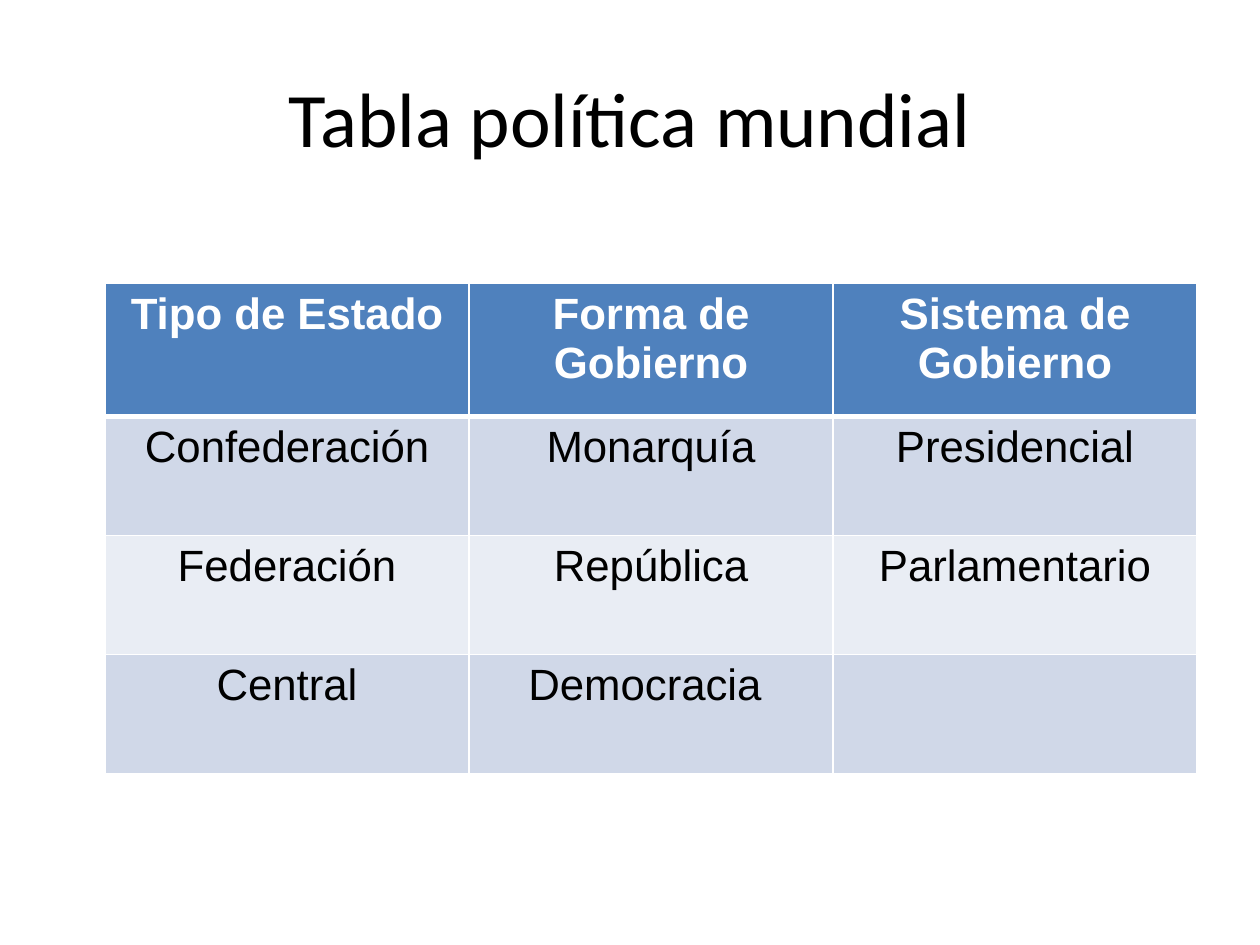
from dataclasses import dataclass

from lxml import etree
from pptx import Presentation
from pptx.dml.color import RGBColor
from pptx.enum.text import MSO_ANCHOR, PP_ALIGN
from pptx.oxml.ns import qn
from pptx.util import Pt

CENTER = PP_ALIGN.CENTER
MIDDLE = MSO_ANCHOR.MIDDLE

HUES = {
    "head": "4F81BD",
    "odd": "D0D8E8",
    "even": "E9EDF4",
    "white": "FFFFFF",
    "black": "000000",
}


@dataclass
class Style:
    font: dict
    hue: str


@dataclass
class Row:
    words: tuple
    high: float
    fill: str
    style: Style
    top: float = 1
    base: float = 1


TITLE = Style({"name": "Calibri", "size": Pt(44), "bold": False}, "black")
HEAD = Style({"name": "Arial", "size": Pt(25), "bold": True}, "white")
BODY = Style({"name": "Arial", "size": Pt(25), "bold": False}, "black")

ROWS = [
    Row(("Tipo de Estado", "Forma de Gobierno", "Sistema de Gobierno"),
        76, "head", HEAD, base=3),
    Row(("Confederación", "Monarquía", "Presidencial"), 68, "odd", BODY, top=3),
    Row(("Federación", "República", "Parlamentario"), 68, "even", BODY),
    Row(("Central", "Democracia ", ""), 68, "odd", BODY),
]


def write(frame, words: str, style: Style) -> None:
    par = frame.paragraphs[0]
    par.alignment = CENTER
    font = par.font
    if words:
        run = par.add_run()
        run.text = words
        font = run.font
    for key, value in style.font.items():
        setattr(font, key, value)
    font.color.rgb = RGBColor.from_string(HUES[style.hue])


def edge(cell, sides: dict) -> None:
    props = cell._tc.get_or_add_tcPr()
    for side, width in sides.items():
        line = etree.SubElement(props, qn(f"a:ln{side}"), w=str(Pt(width)))
        fill = etree.SubElement(line, qn("a:solidFill"))
        etree.SubElement(fill, qn("a:srgbClr"), val=HUES["white"])


def add_title(slide, words: str) -> None:
    box = slide.shapes.add_textbox(Pt(36), Pt(21.6), Pt(648), Pt(90))
    frame = box.text_frame
    frame.word_wrap = True
    frame.vertical_anchor = MIDDLE
    write(frame, words, TITLE)


def add_grid(slide, rows: list[Row]) -> None:
    count = len(rows[0].words)
    wide = 208
    high = sum(row.high for row in rows)
    grid = slide.shapes.add_table(
        len(rows), count, Pt(60), Pt(162), Pt(wide * count), Pt(high)
    ).table
    for col in grid.columns:
        col.width = Pt(wide)
    for line, row in zip(grid.rows, rows):
        line.height = Pt(row.high)
        for cell, words in zip(line.cells, row.words):
            write(cell.text_frame, words, row.style)
            edge(cell, {"L": 1, "R": 1, "T": row.top, "B": row.base})
            cell.fill.solid()
            cell.fill.fore_color.rgb = RGBColor.from_string(HUES[row.fill])


def main() -> None:
    deck = Presentation()
    deck.slide_width = Pt(720)
    deck.slide_height = Pt(540)
    slide = deck.slides.add_slide(deck.slide_layouts[6])
    add_title(slide, "Tabla política mundial")
    add_grid(slide, ROWS)
    deck.save("out.pptx")


if __name__ == "__main__":
    main()
